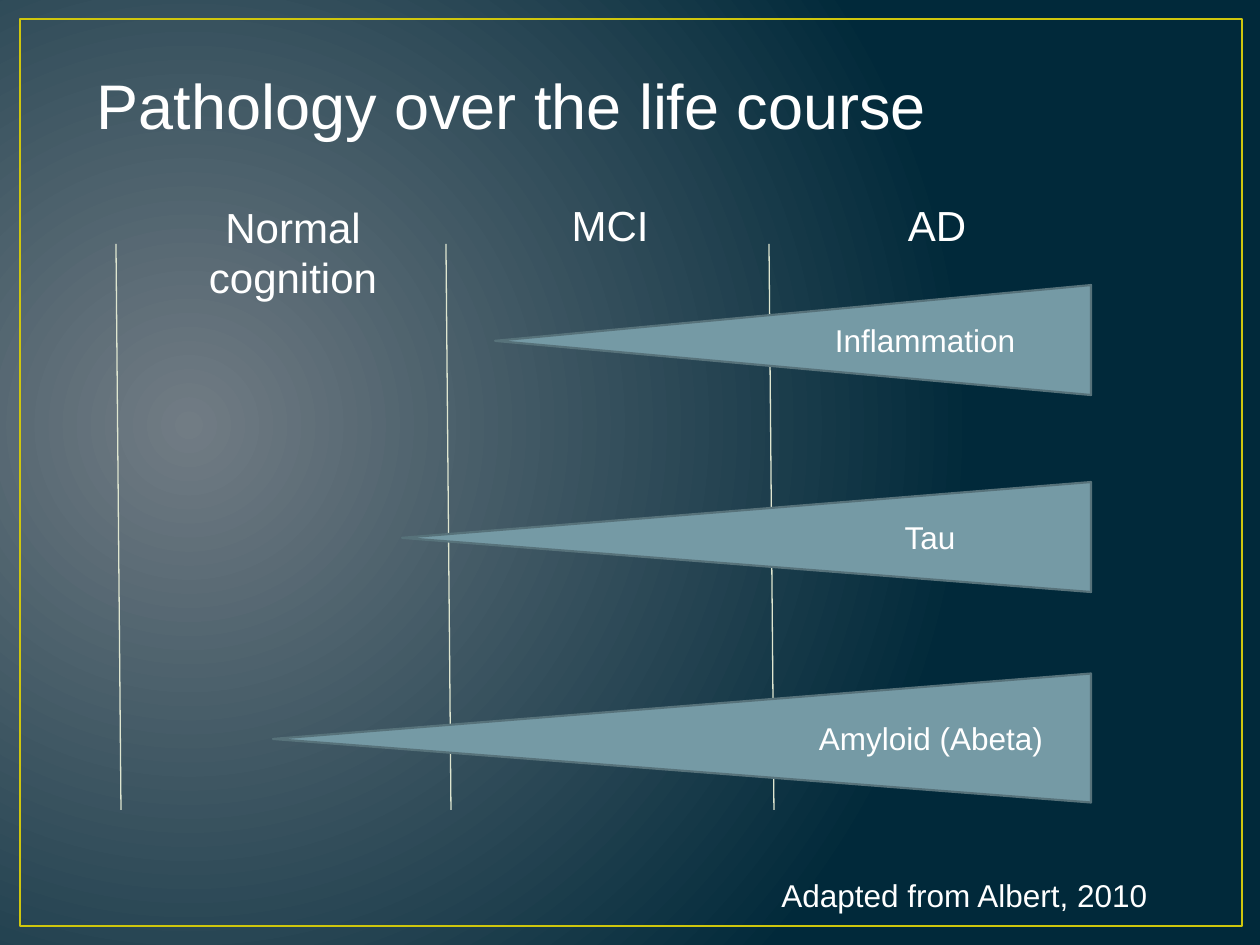
from lxml.etree import SubElement
from pptx import Presentation
from pptx.dml.color import RGBColor
from pptx.enum.shapes import MSO_CONNECTOR, MSO_SHAPE
from pptx.enum.text import MSO_ANCHOR, MSO_AUTO_SIZE, PP_ALIGN
from pptx.oxml.ns import qn
from pptx.util import Inches, Pt

SCALE = Inches(1) / 126
FONT = "Arial"
COLORS = {
    "glow": "717C84",
    "deep": "01293A",
    "frame": "CFC60D",
    "rule": "DFE6D0",
    "wedge": "759AA5",
    "edge": "57727A",
    "text": "FFFFFF",
}


def px(*nums):
    return [round(num * SCALE) for num in nums]


def rgb(name):
    return RGBColor.from_string(COLORS[name])


class Board:
    def __init__(self, slide):
        self.slide = slide
        self.shapes = slide.shapes

    def glow(self):
        fill = self.slide.background.fill
        fill.gradient()
        for stop, name, place in zip(fill.gradient_stops, ("glow", "deep"), (0, 1)):
            stop.color.rgb = rgb(name)
            stop.position = place
        grad = self.slide.element.find(".//" + qn("a:gradFill"))
        grad.remove(grad.find(qn("a:lin")))
        round_fill = SubElement(grad, qn("a:path"), path="circle")
        SubElement(round_fill, qn("a:fillToRect"), l="15000", t="50000", r="85000", b="60000")

    def style(self, shape, text, size, align):
        frame = shape.text_frame
        frame.word_wrap = True
        frame.auto_size = MSO_AUTO_SIZE.NONE
        frame.vertical_anchor = MSO_ANCHOR.TOP
        frame.text = text
        para = frame.paragraphs[0]
        para.alignment = align
        para.font.name = FONT
        para.font.size = Pt(size)
        para.font.color.rgb = rgb("text")

    def title(self, text, *box):
        shape = self.shapes.title
        shape.left, shape.top, shape.width, shape.height = px(*box)
        self.style(shape, text, 36, PP_ALIGN.LEFT)

    def text(self, text, *box, size=18, align=PP_ALIGN.CENTER):
        self.style(self.shapes.add_textbox(*px(*box)), text, size, align)

    def frame(self, *box):
        shape = self.shapes.add_shape(MSO_SHAPE.RECTANGLE, *px(*box))
        shape.shadow.inherit = False
        shape.fill.background()
        shape.line.color.rgb = rgb("frame")
        shape.line.width = Pt(1.5)

    def rule(self, *ends):
        line = self.shapes.add_connector(MSO_CONNECTOR.STRAIGHT, *px(*ends))
        line.line.color.rgb = rgb("rule")
        line.line.width = Pt(0.75)
        SubElement(line.element.spPr, qn("a:effectLst"))

    def wedge(self, left, right, mid, height):
        length = right - left
        box = ((left + right - height) / 2, mid - length / 2, height, length)
        shape = self.shapes.add_shape(MSO_SHAPE.ISOSCELES_TRIANGLE, *px(*box))
        shape.rotation = 270
        shape.adjustments[0] = 0.493
        shape.shadow.inherit = False
        shape.fill.solid()
        shape.fill.fore_color.rgb = rgb("wedge")
        shape.line.color.rgb = rgb("edge")
        shape.line.width = Pt(1.25)


def main():
    deck = Presentation()
    deck.slide_width, deck.slide_height = px(1260, 945)
    board = Board(deck.slides.add_slide(deck.slide_layouts[5]))
    board.glow()
    board.frame(20, 19, 1222, 907)
    board.title("Pathology over the life course", 84, 60, 1081, 89)

    for left in (116, 446, 769):
        board.rule(left, 244, left + 5, 810)

    stages = (
        ("Normal cognition", 184, 195, 115),
        ("MCI", 501, 193, 64),
        ("AD", 828, 193, 64),
    )
    for name, left, top, height in stages:
        board.text(name, left, top, 218, height, size=24)

    signs = (
        ("Amyloid (Abeta)", 273, 738, 129, 780),
        ("Tau", 402, 537, 110, 779),
        ("Inflammation", 495, 340, 110, 774),
    )
    for name, tip, mid, height, left in signs:
        board.wedge(tip, 1091, mid, height)
        board.text(name, left, mid - 25, 302, 50)

    board.text("Adapted from Albert, 2010", 769, 870, 427, 50, align=PP_ALIGN.LEFT)
    deck.save("out.pptx")


if __name__ == "__main__":
    main()
